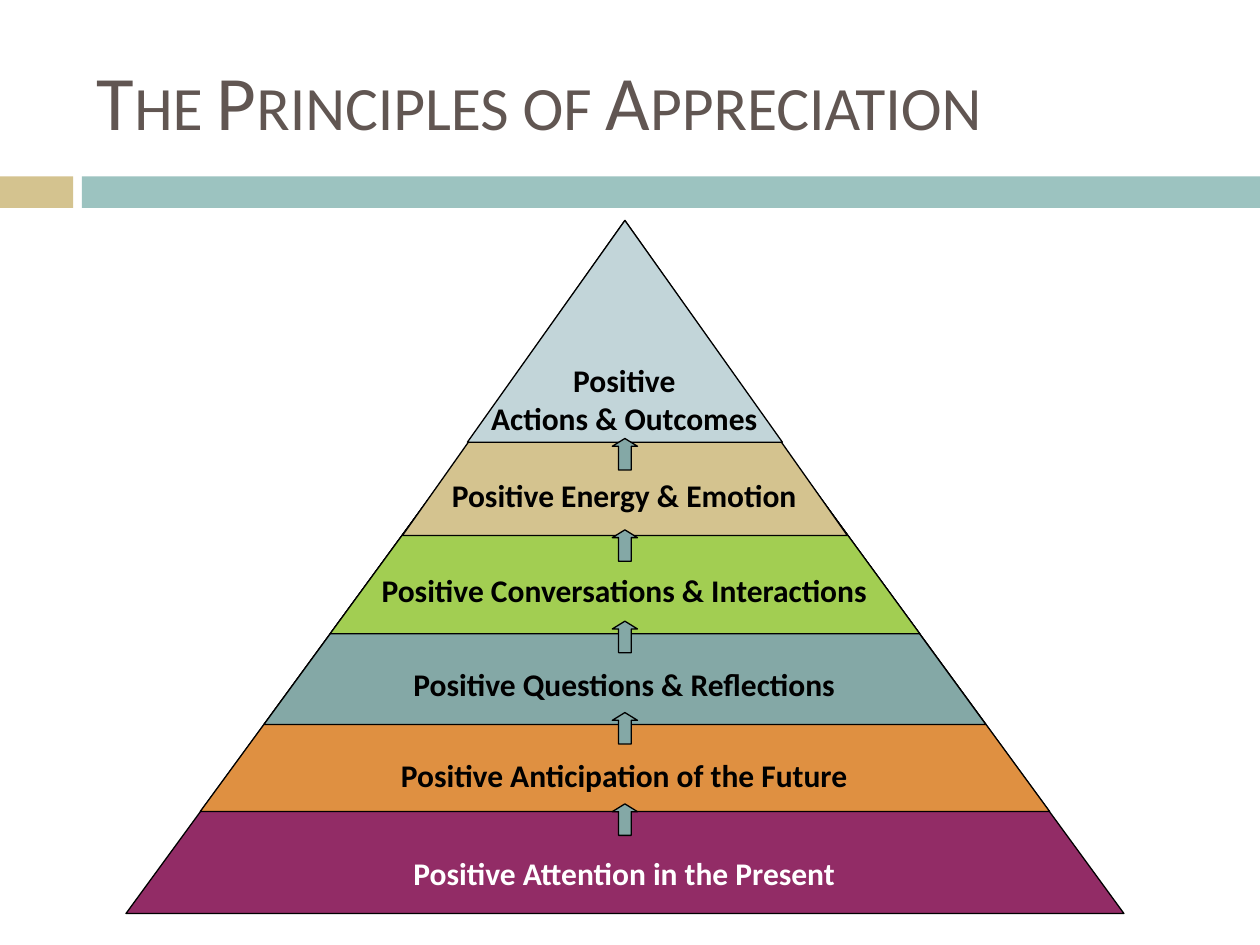
from pptx import Presentation
from pptx.dml.color import RGBColor
from pptx.enum.shapes import MSO_SHAPE
from pptx.enum.text import MSO_ANCHOR, PP_ALIGN
from pptx.util import Inches, Pt

RECTANGLE = MSO_SHAPE.RECTANGLE
TRIANGLE = MSO_SHAPE.ISOSCELES_TRIANGLE
UP_ARROW = MSO_SHAPE.UP_ARROW
CENTER, LEFT = PP_ALIGN.CENTER, PP_ALIGN.LEFT
TOP, MIDDLE = MSO_ANCHOR.TOP, MSO_ANCHOR.MIDDLE

FONT = "Calibri"
BLACK, WHITE = "000000", "FFFFFF"
SAND, TEAL, SLATE = "D4C38F", "9CC3C0", "84A8A6"
AXIS = 4.96  # centre line of the pyramid

# Triangle top, width, height and fill; label top, lines and colour
LEVELS = [
    (1.83, 7.92, 5.42, "922C66", 6.73, ["Positive Attention in the Present"], WHITE),
    (1.83, 6.74, 4.61, "DF9041", 5.95, ["Positive Anticipation of the Future"], BLACK),
    (1.83, 5.73, 3.92, SLATE, 5.23, ["Positive Questions & Reflections"], BLACK),
    (1.83, 4.68, 3.2, "A2CE52", 4.48, ["Positive Conversations & Interactions"], BLACK),
    (1.75, 3.53, 2.5, SAND, 3.73, ["Positive Energy & Emotion"], BLACK),
    (1.75, 2.5, 1.76, "C2D5D9", 2.82, ["Positive", "Actions & Outcomes"], BLACK),
]


def color(value):
    return RGBColor.from_string(value)


def add_shape(page, kind, left, top, width, height, fill, outlined=True):
    shape = page.shapes.add_shape(
        kind, Inches(left), Inches(top), Inches(width), Inches(height))
    shape.shadow.inherit = False
    shape.fill.solid()
    shape.fill.fore_color.rgb = color(fill)
    if outlined:
        shape.line.color.rgb = color(BLACK)
        shape.line.width = Pt(0.75)
    else:
        shape.line.fill.background()
    return shape


def add_text(page, left, top, width, height, lines, size, ink,
             bold=False, align=CENTER, anchor=TOP, small_caps=False):
    box = page.shapes.add_textbox(
        Inches(left), Inches(top), Inches(width), Inches(height))
    frame = box.text_frame
    frame.word_wrap = True
    frame.vertical_anchor = anchor
    para = frame.paragraphs[0]
    para.alignment = align
    for index, line in enumerate(lines):
        if index:
            para.add_line_break()
        span = para.add_run()
        span.text = line
        span.font.name = FONT
        span.font.size = Pt(size)
        span.font.bold = bold
        span.font.color.rgb = color(ink)
        if small_caps:
            span._r.get_or_add_rPr().set("cap", "small")


def add_header(page):
    add_shape(page, RECTANGLE, 0, 1.4, 0.58, 0.25, SAND, outlined=False)
    add_shape(page, RECTANGLE, 0.65, 1.4, 9.35, 0.25, TEAL, outlined=False)
    add_text(page, 0.67, 0.25, 9.33, 1.08, ["The Principles of Appreciation"],
             44, "615652", align=LEFT, anchor=MIDDLE, small_caps=True)


def add_pyramid(page):
    # Each smaller triangle covers the upper part of the one before
    for top, width, height, fill, *_ in LEVELS:
        add_shape(page, TRIANGLE, AXIS - width / 2, top, width, height, fill)
    for *_, label_top, lines, ink in LEVELS:
        label_height = 0.1 + 0.3 * len(lines)
        add_text(page, 2.04, label_top, 5.83, label_height, lines, 18, ink, bold=True)


def add_arrows(page):
    # Evenly spaced from the base up; the last one stays below the peak label
    width, height, lowest_top, highest_top = 0.2, 0.25, 6.38, 3.48
    count = len(LEVELS) - 1
    step = (lowest_top - highest_top) / (count - 1)
    for index in range(count):
        arrow = add_shape(page, UP_ARROW, AXIS - width / 2,
                          lowest_top - index * step, width, height, SLATE)
        arrow.adjustments[0] = 0.5
        arrow.adjustments[1] = 0.31


def main():
    deck = Presentation()
    deck.slide_width, deck.slide_height = Inches(10), Inches(7.5)
    page = deck.slides.add_slide(deck.slide_layouts[6])
    add_header(page)
    add_pyramid(page)
    add_arrows(page)
    deck.save("out.pptx")


if __name__ == "__main__":
    main()
